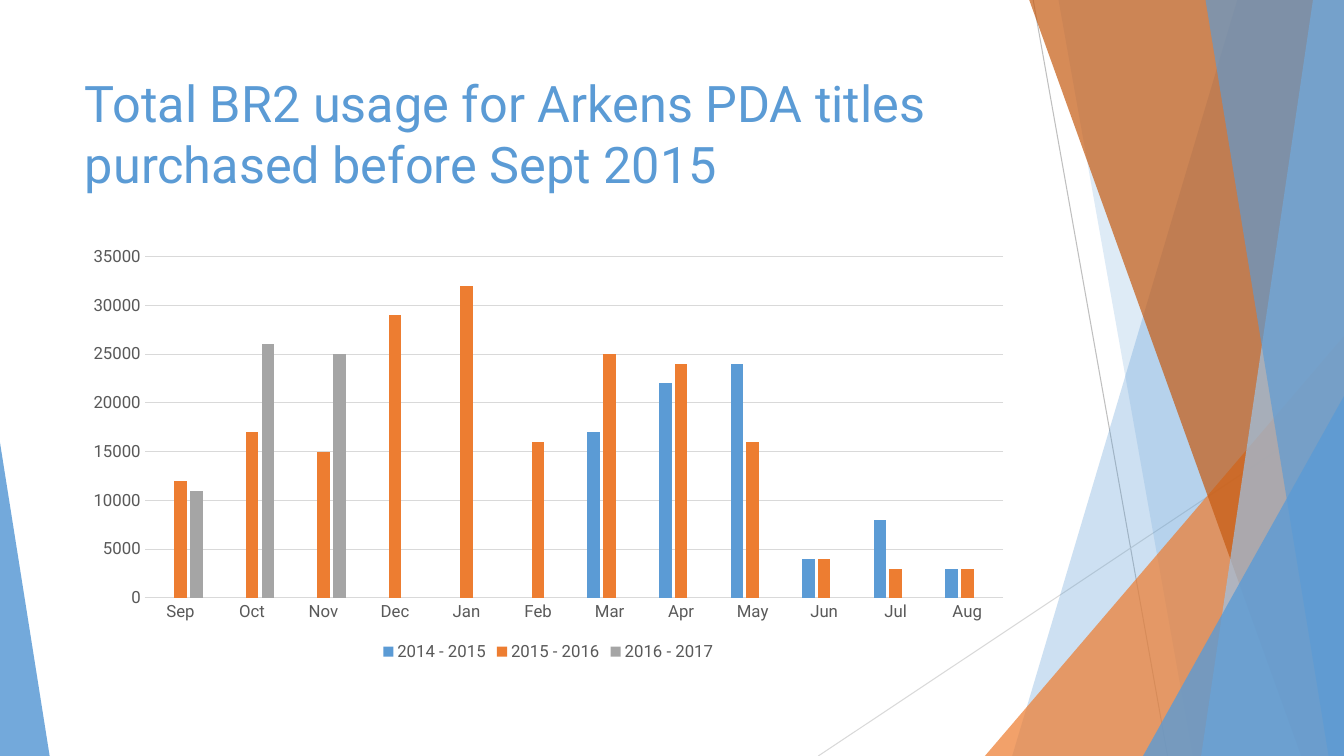
from lxml import etree
from pptx import Presentation
from pptx import util as u
from pptx.chart import data
from pptx.dml import color
from pptx.enum import chart as ch, shapes, text
from pptx.oxml import ns

Pt = u.Pt
FONT = "Roboto"
COLORS = {
    "blue": "5B9BD5", "light_blue": "9DC3E6", "orange": "ED7D31",
    "rust": "C55A11", "gray": "A5A5A5", "line": "BFBFBF",
    "grid": "D9D9D9", "label": "595959",
}


def write(frame, wording, size, hue, align=text.PP_ALIGN.LEFT, anchor=text.MSO_ANCHOR.TOP):
    frame.word_wrap = True
    frame.auto_size = text.MSO_AUTO_SIZE.NONE
    frame.vertical_anchor = anchor
    paragraph = frame.paragraphs[0]
    paragraph.alignment = align
    run = paragraph.add_run()
    run.text = wording
    run.font.name, run.font.size = FONT, Pt(size)
    run.font.color.rgb = color.RGBColor.from_string(COLORS[hue])


def paint(facet, hue, opacity):
    facet.shadow.inherit = False
    facet.line.fill.background()
    facet.fill.solid()
    facet.fill.fore_color.rgb = color.RGBColor.from_string(COLORS[hue])
    tint = facet.fill._xPr.find(".//" + ns.qn("a:srgbClr"))
    etree.SubElement(tint, ns.qn("a:alpha")).set("val", str(opacity * 1000))


prs = Presentation()
prs.slide_width, prs.slide_height = Pt(960), Pt(540)
slide = prs.slides.add_slide(prs.slide_layouts[5])

for x1, y1, x2, y2, hue in [(738, 0, 834, 540, "line"), (960, 290, 584.5, 540, "grid")]:
    ray = slide.shapes.add_connector(shapes.MSO_CONNECTOR.STRAIGHT, Pt(x1), Pt(y1), Pt(x2), Pt(y2))
    ray.line.width = Pt(0.75)
    ray.line.color.rgb = color.RGBColor.from_string(COLORS[hue])
    etree.SubElement(ray._element.spPr, ns.qn("a:effectLst"))

facets = [
    ("band", (884, 723), "blue", 30),
    ("band", (756, 852), "blue", 20),
    ("wedge", (703.5, 240, 256.5, 300, 1), "orange", 72),
    ("band", (735, 929.5), "rust", 70),
    ("band", (938, 858), "light_blue", 70),
    ("band", (861, 949), "blue", 65),
    ("wedge", (816.5, 283, 143.5, 257, 1), "blue", 80),
    ("wedge", (0, 316, 35.5, 224, 0), "blue", 85),
]
for kind, place, hue, opacity in facets:
    if kind == "band":
        top_x, bottom_x = place
        outline = slide.shapes.build_freeform(Pt(top_x), Pt(-0.6))
        corners = [(960, -0.6), (960, 540), (bottom_x, 540)]
        outline.add_line_segments([(Pt(x), Pt(y)) for x, y in corners], close=True)
        facet = outline.convert_to_shape()
    else:
        *box, apex = place
        facet = slide.shapes.add_shape(shapes.MSO_SHAPE.ISOSCELES_TRIANGLE, *map(Pt, box))
        facet.adjustments[0] = apex
    paint(facet, hue, opacity)

title = slide.shapes.title
title.left, title.top, title.width, title.height = Pt(53.5), Pt(48), Pt(677), Pt(104)
write(title.text_frame, "Total BR2 usage for Arkens PDA titles purchased before Sept 2015", size=36, hue="blue")

usage = data.CategoryChartData()
usage.categories = "Sep Oct Nov Dec Jan Feb Mar Apr May Jun Jul Aug".split()
thousands = {
    "2014 - 2015": [None] * 6 + [17, 22, 24, 4, 8, 3],
    "2015 - 2016": [12, 17, 15, 29, 32, 16, 25, 24, 16, 4, 3, 3],
    "2016 - 2017": [11, 26, 25] + [None] * 9,
}
for year, counted in thousands.items():
    usage.add_series(year, [n and n * 1000 for n in counted])
chart = slide.shapes.add_chart(ch.XL_CHART_TYPE.COLUMN_CLUSTERED,
                               Pt(53.25), Pt(170), Pt(676.75), Pt(305.5), usage).chart
chart.has_title = False
chart.has_legend = True
chart.legend.position = ch.XL_LEGEND_POSITION.BOTTOM
chart.legend.include_in_layout = False

months, counts = chart.category_axis, chart.value_axis
counts.minimum_scale, counts.maximum_scale, counts.major_unit = 0, 35000, 5000
counts.has_major_gridlines = True
counts.format.line.fill.background()
for axis in (months, counts):
    axis.major_tick_mark = axis.minor_tick_mark = ch.XL_TICK_MARK.NONE
for rule in (months.format.line, counts.major_gridlines.format.line):
    rule.width = Pt(0.75)
    rule.color.rgb = color.RGBColor.from_string(COLORS["grid"])
for font in (chart.font, months.tick_labels.font, counts.tick_labels.font, chart.legend.font):
    font.name, font.size = FONT, Pt(12)
    font.color.rgb = color.RGBColor.from_string(COLORS["label"])

plot = chart.plots[0]
plot.gap_width, plot.overlap, plot.vary_by_categories = 219, -27, False
for columns, hue in zip(plot.series, ("blue", "orange", "gray")):
    columns.format.fill.solid()
    columns.format.fill.fore_color.rgb = color.RGBColor.from_string(COLORS[hue])

prs.save("out.pptx")
